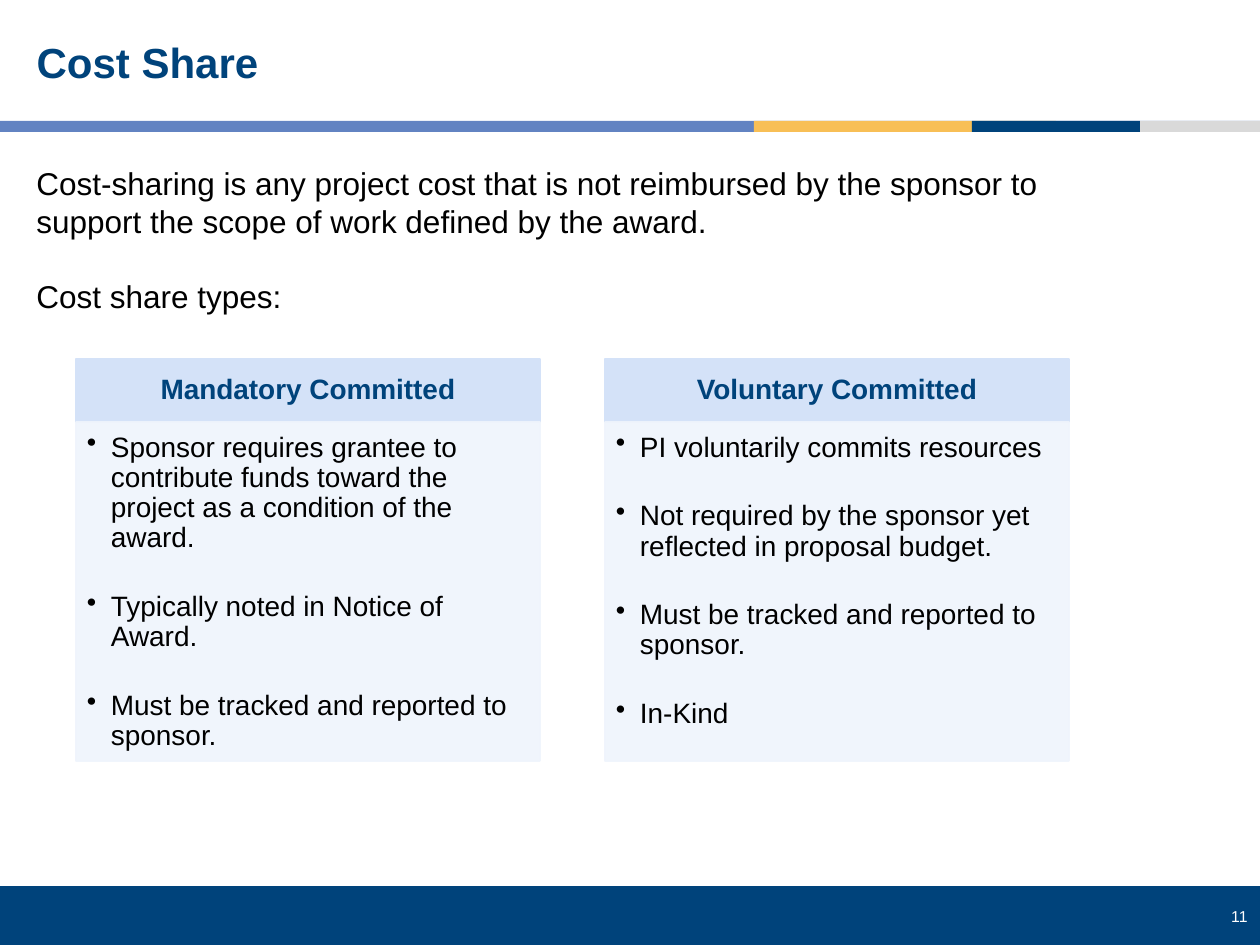
from dataclasses import dataclass

from lxml import etree
from pptx import Presentation
from pptx import util as u
from pptx.dml.color import RGBColor
from pptx.enum import shapes, text
from pptx.oxml.ns import qn

EMU_PER_PX = 914400 / 126


def px(length):
    return u.Emu(round(length * EMU_PER_PX))


@dataclass(frozen=True)
class Theme:
    font: str = "Arial"
    navy: str = "00437B"
    blue: str = "6283C2"
    gold: str = "F8BF56"
    grey: str = "D9D9D9"
    header: str = "D4E2F8"
    panel: str = "EFF4FC"
    black: str = "000000"
    white: str = "FFFFFF"
    title_size: int = 24
    body_size: int = 18
    card_size: int = 16
    number_size: int = 9


class Builder:
    def __init__(self, slide, theme):
        self.slide = slide
        self.theme = theme

    def set_text(self, frame, lines, size, color, bold=False, align=text.PP_ALIGN.LEFT,
                 spacing=1.0, gap=0, bullets=False):
        """Fill a text frame, with gap points between its paragraphs."""
        frame.word_wrap = True
        for index, line in enumerate(lines):
            paragraph = frame.paragraphs[0] if index == 0 else frame.add_paragraph()
            paragraph.text = line
            paragraph.alignment = align
            paragraph.line_spacing = spacing
            paragraph.space_before = u.Pt(gap if index else 0)
            if bullets:
                self.bullet(paragraph)
            font = paragraph.font
            font.name, font.size, font.bold = self.theme.font, u.Pt(size), bold
            font.color.rgb = RGBColor.from_string(color)

    def bullet(self, paragraph):
        properties = paragraph._p.get_or_add_pPr()
        properties.set("marL", str(px(24)))
        properties.set("indent", str(-px(24)))
        etree.SubElement(properties, qn("a:buChar")).set("char", "•")

    def title(self, box, line):
        title = self.slide.shapes.title
        title.left, title.top, title.width, title.height = map(px, box)
        title.text_frame.vertical_anchor = text.MSO_ANCHOR.MIDDLE
        self.set_text(title.text_frame, [line], self.theme.title_size, self.theme.navy,
                      bold=True, spacing=0.9)

    def text_box(self, box, lines, size, color, **style):
        shape = self.slide.shapes.add_textbox(*map(px, box))
        self.set_text(shape.text_frame, lines, size, color, **style)

    def rectangle(self, box, color, outlined=False, opacity=100):
        shape = self.slide.shapes.add_shape(shapes.MSO_SHAPE.RECTANGLE, *map(px, box))
        shape.shadow.inherit = False
        fills = [shape.fill]
        if outlined:
            shape.line.width = u.Pt(1)
            fills.append(shape.line.fill)
        else:
            shape.line.fill.background()
        for fill in fills:
            fill.solid()
            fill.fore_color.rgb = RGBColor.from_string(color)
        if opacity < 100:
            for element in shape._element.spPr.iter(qn("a:srgbClr")):
                etree.SubElement(element, qn("a:alpha")).set("val", str(opacity * 1000))
        return shape

    def panel(self, box, color, insets, anchor, opacity=100):
        """Draw an outlined rectangle and return its text frame."""
        frame = self.rectangle(box, color, True, opacity).text_frame
        frame.margin_left, frame.margin_top, frame.margin_right, frame.margin_bottom = map(px, insets)
        frame.vertical_anchor = anchor
        return frame

    def card(self, left, heading, points):
        theme, top, width, header_height = self.theme, 359, 464, 63
        header = self.panel((left, top, width, header_height), theme.header,
                            (15, 9, 15, 9), text.MSO_ANCHOR.MIDDLE)
        self.set_text(header, [heading], theme.card_size, theme.navy, bold=True,
                      align=text.PP_ALIGN.CENTER, spacing=0.9)
        body = self.panel((left, top + header_height, width, 339), theme.panel,
                          (11, 11, 15, 18), text.MSO_ANCHOR.TOP, opacity=90)
        self.set_text(body, points, theme.card_size, theme.black, spacing=0.9, gap=22,
                      bullets=True)


def main():
    presentation = Presentation()
    presentation.slide_width, presentation.slide_height = px(1260), px(945)
    slide = presentation.slides.add_slide(presentation.slide_layouts[5])
    theme = Theme()
    builder = Builder(slide, theme)

    builder.rectangle((0, 886, 1260, 59), theme.navy)
    builder.text_box((1173, 901, 87, 32), ["11"], theme.number_size, theme.white,
                     align=text.PP_ALIGN.RIGHT)

    stripes = [(0, 1260, theme.blue), (754, 302, theme.gold),
               (972, 168, theme.navy), (1140, 120, theme.grey)]
    for left, width, color in stripes:
        builder.rectangle((left, 121, width, 11), color)

    builder.title((24, 21, 1206, 87), "Cost Share")
    builder.text_box((24, 158, 1106, 204), [
        "Cost-sharing is any project cost that is not reimbursed by the sponsor to "
        "support the scope of work defined by the award.",
        "Cost share types:",
    ], theme.body_size, theme.black, gap=21)

    tracked = "Must be tracked and reported to sponsor."
    cards = [
        ("Mandatory Committed", [
            "Sponsor requires grantee to contribute funds toward the project as a "
            "condition of the award.",
            "Typically noted in Notice of Award.",
            tracked,
        ]),
        ("Voluntary Committed", [
            "PI voluntarily commits resources",
            "Not required by the sponsor yet reflected in proposal budget.",
            tracked,
            "In-Kind",
        ]),
    ]
    for index, (heading, points) in enumerate(cards):
        builder.card(76 + index * 529, heading, points)

    presentation.save("out.pptx")


if __name__ == "__main__":
    main()
